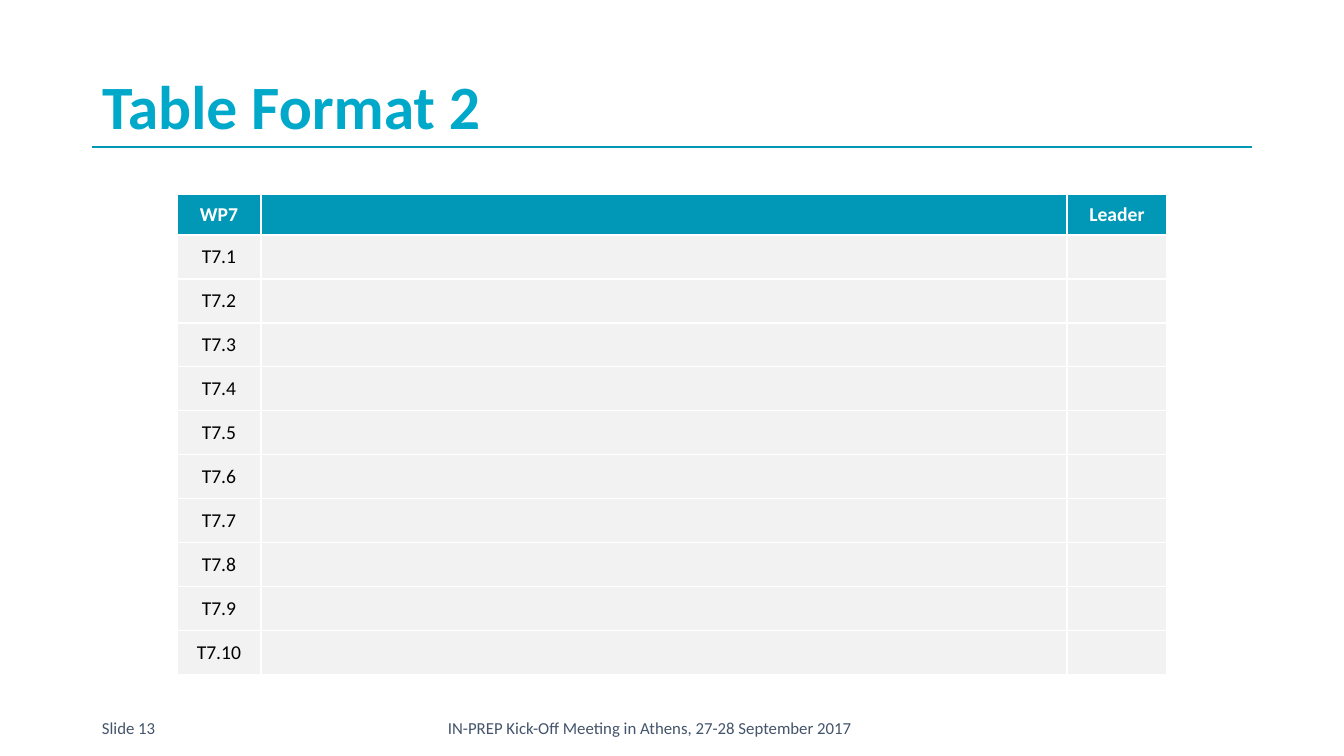
from dataclasses import dataclass

from lxml import etree
from pptx import Presentation
from pptx import util as u
from pptx.dml.color import RGBColor
from pptx.enum import shapes, text
from pptx.oxml import ns

EMU_PER_PX = 914400 / 100.8


@dataclass(frozen=True)
class Theme:
    font: str = "Calibri"
    title: str = "00A8CA"
    accent: str = "0098B6"
    footer: str = "44546A"
    body: str = "000000"
    row: str = "F2F2F2"
    white: str = "FFFFFF"
    title_size: int = 44
    table_size: int = 14
    footer_size: int = 12


THEME = Theme()


def px(length):
    return u.Emu(round(length * EMU_PER_PX))


def add_run(paragraph, words, size, color, bold=False):
    run = paragraph.add_run()
    run.text = words
    run.font.name = THEME.font
    run.font.size = u.Pt(size)
    run.font.bold = bold
    run.font.color.rgb = RGBColor.from_string(color)


def set_title(slide, words, left, top, width, height):
    title = slide.shapes.title
    title.left, title.top, title.width, title.height = map(px, (left, top, width, height))
    frame = title.text_frame
    frame.word_wrap = True
    frame.auto_size = text.MSO_AUTO_SIZE.NONE
    frame.vertical_anchor = text.MSO_ANCHOR.MIDDLE
    paragraph = frame.paragraphs[0]
    paragraph.alignment = text.PP_ALIGN.LEFT
    paragraph.line_spacing = 0.9
    add_run(paragraph, words, THEME.title_size, THEME.title, bold=True)


def add_rule(slide, left, right, y):
    rule = slide.shapes.add_connector(
        shapes.MSO_CONNECTOR.STRAIGHT, px(left), px(y), px(right), px(y))
    rule.line.color.rgb = RGBColor.from_string(THEME.accent)
    rule.line.width = u.Pt(1)
    etree.SubElement(rule.element.spPr, ns.qn("a:effectLst"))


def add_footer(slide, words, left, width, alignment):
    box = slide.shapes.add_textbox(px(left), px(708), px(width), px(40))
    frame = box.text_frame
    frame.word_wrap = True
    frame.vertical_anchor = text.MSO_ANCHOR.MIDDLE
    frame.paragraphs[0].alignment = alignment
    add_run(frame.paragraphs[0], words, THEME.footer_size, THEME.footer)


def add_borders(cell):
    properties = cell._tc.get_or_add_tcPr()
    for side in ("lnL", "lnR", "lnT", "lnB"):
        line = etree.SubElement(properties, ns.qn(f"a:{side}"), w=str(u.Pt(1)))
        fill = etree.SubElement(line, ns.qn("a:solidFill"))
        etree.SubElement(fill, ns.qn("a:srgbClr"), val=THEME.white)


def format_cell(cell, words, is_header):
    add_borders(cell)
    cell.fill.solid()
    cell.fill.fore_color.rgb = RGBColor.from_string(THEME.accent if is_header else THEME.row)
    cell.margin_left = cell.margin_right = cell.margin_top = cell.margin_bottom = 0
    cell.vertical_anchor = text.MSO_ANCHOR.MIDDLE
    if words:
        paragraph = cell.text_frame.paragraphs[0]
        paragraph.alignment = text.PP_ALIGN.CENTER
        color = THEME.white if is_header else THEME.body
        add_run(paragraph, words, THEME.table_size, color, bold=is_header)


def add_task_table(slide, rows, left, top, column_widths, header_height, row_height):
    heights = [header_height] + [row_height] * (len(rows) - 1)
    table = slide.shapes.add_table(
        len(rows), len(column_widths), px(left), px(top),
        px(sum(column_widths)), px(sum(heights))).table
    table.horz_banding = False
    for column, width in zip(table.columns, column_widths):
        column.width = px(width)
    for index, (row, height, values) in enumerate(zip(table.rows, heights, rows)):
        row.height = px(height)
        for cell, words in zip(row.cells, values):
            format_cell(cell, words, is_header=index == 0)


def main():
    presentation = Presentation()
    presentation.slide_width, presentation.slide_height = px(1344), px(756)
    slide = presentation.slides.add_slide(presentation.slide_layouts[5])
    add_rule(slide, 92, 1252, 147)
    set_title(slide, "Table Format 2", 92, 58, 1160, 104)
    add_footer(slide, "IN-PREP Kick-Off Meeting in Athens, 27-28 September 2017",
               423, 454, text.PP_ALIGN.CENTER)
    add_footer(slide, "Slide 13", 92, 81, text.PP_ALIGN.LEFT)
    tasks = [(f"T7.{number}", "", "") for number in range(1, 11)]
    add_task_table(slide, [("WP7", "", "Leader")] + tasks, 177, 194,
                   column_widths=(84, 806, 100), header_height=41, row_height=44)
    presentation.save("out.pptx")


if __name__ == "__main__":
    main()
